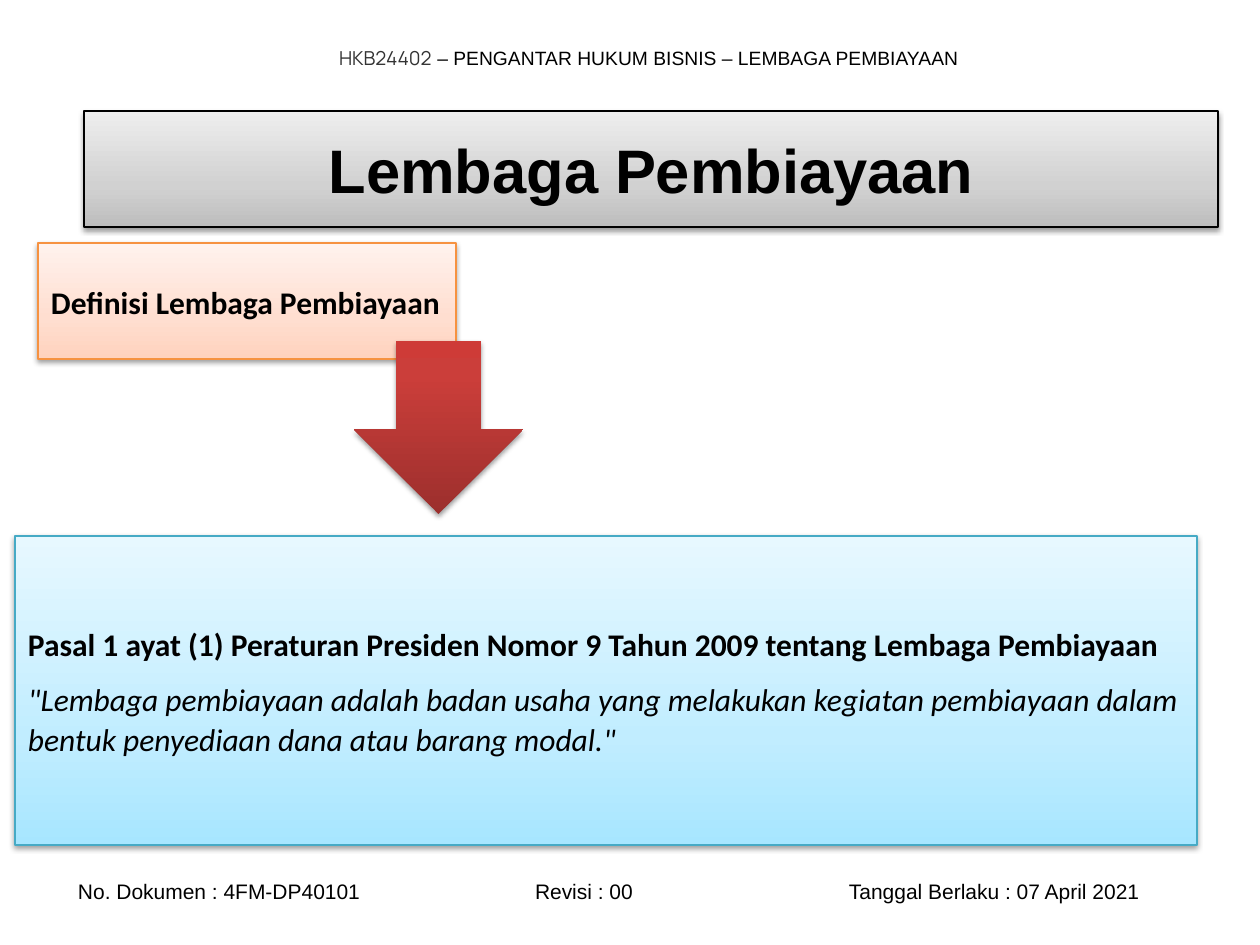
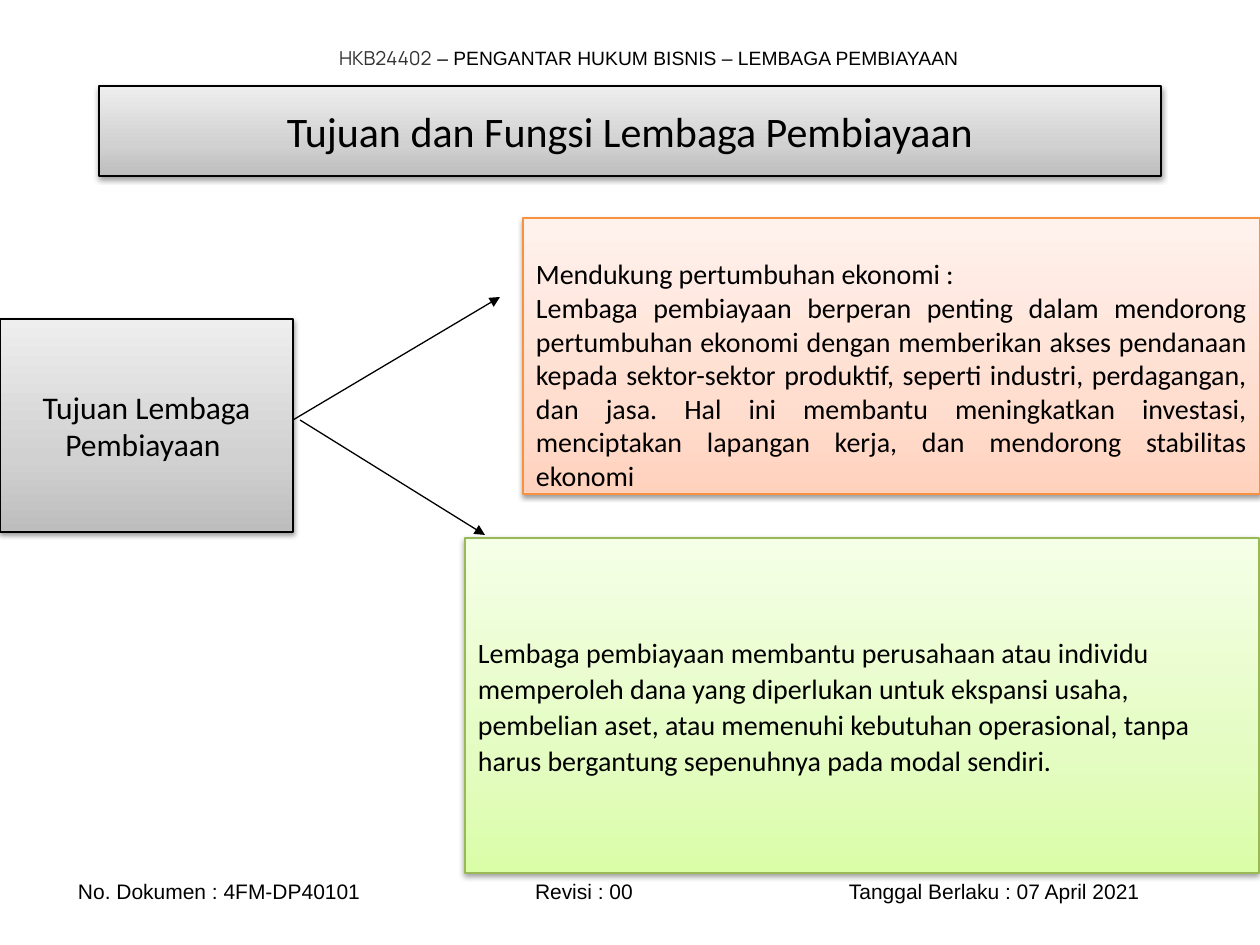
from dataclasses import dataclass, field
from typing import Any

from lxml.etree import SubElement
from pptx import Presentation
from pptx.dml.color import RGBColor
from pptx.enum.shapes import MSO_CONNECTOR, MSO_SHAPE
from pptx.enum.text import MSO_ANCHOR as Anchor, MSO_AUTO_SIZE, PP_ALIGN as Align
from pptx.oxml.ns import qn
from pptx.util import Emu, Pt

PX_PER_INCH = 126
INSET_X, INSET_Y = 13, 6
COLORS = {"text": "000000", "code": "333333"}

# Gradient stops run from the bottom edge to the top edge
GRADIENTS = {
    "gray": ((0, "BDBDBD"), (35, "D1D1D1"), (100, "EEEEEE")),
    "orange": ((0, "FFD2BD"), (35, "FFDED0"), (100, "FFF2ED")),
    "blue": ((0, "A7E6FF"), (35, "C1EDFF"), (100, "E7F8FF")),
    "green": ((0, "DAFDA7"), (35, "E4FCC2"), (100, "F5FFE7")),
    "red": ((0, "9C2F2D"), (80, "CB3E3A"), (100, "CE3B37")),
}
OUTLINES = {"gray": "000000", "orange": "F69240", "blue": "46AAC5", "green": "98B955"}


@dataclass(frozen=True)
class Phrase:
    text: str
    style: dict[str, Any] = field(default_factory=dict)


@dataclass(frozen=True)
class Panel:
    box: tuple[int, int, int, int]
    theme: str
    paragraphs: tuple[tuple[Phrase, ...], ...] = ()
    style: dict[str, Any] = field(default_factory=dict)
    geometry: MSO_SHAPE = MSO_SHAPE.RECTANGLE


@dataclass(frozen=True)
class Arrow:
    start: tuple[int, int]
    end: tuple[int, int]


@dataclass(frozen=True)
class SlideContent:
    title: Panel
    items: tuple[Panel | Arrow, ...]


def px(length: int) -> Emu:
    return Emu(round(length * 914400 / PX_PER_INCH))


def rgb(hex_color: str) -> RGBColor:
    return RGBColor.from_string(hex_color)


def write_text(shape, paragraphs, *, size=18, font="Calibri", color=COLORS["text"],
               bold=False, italic=False, align=Align.LEFT, anchor=Anchor.MIDDLE,
               spacing=1.0, after=0, bottom=INSET_Y, tabs=()) -> None:
    frame = shape.text_frame
    frame.word_wrap = True
    frame.auto_size = MSO_AUTO_SIZE.NONE
    frame.vertical_anchor = anchor
    frame.margin_left = frame.margin_right = px(INSET_X)
    frame.margin_top, frame.margin_bottom = px(INSET_Y), px(bottom)
    for index, phrases in enumerate(paragraphs):
        paragraph = frame.add_paragraph() if index else frame.paragraphs[0]
        paragraph.alignment = align
        paragraph.line_spacing = spacing
        paragraph.space_before, paragraph.space_after = Pt(0), Pt(after)
        if tabs:
            tab_list = SubElement(paragraph._p.get_or_add_pPr(), qn("a:tabLst"))
            for position in tabs:
                SubElement(tab_list, qn("a:tab"), pos=str(px(position)), algn="l")
        for phrase in phrases:
            run = paragraph.add_run()
            run.text = phrase.text
            look = {"size": size, "font": font, "color": color,
                    "bold": bold, "italic": italic} | phrase.style
            run.font.size, run.font.name = Pt(look["size"]), look["font"]
            run.font.bold, run.font.italic = look["bold"], look["italic"]
            run.font.color.rgb = rgb(look["color"])


def decorate(shape, theme: str) -> None:
    """Give a shape its gradient, outline and soft shadow."""
    shape.fill.gradient()
    shape.fill.gradient_angle = 90
    properties = shape._element.spPr
    stops = properties.find(qn("a:gradFill")).find(qn("a:gsLst"))
    stops.clear()
    for percent, color in GRADIENTS[theme]:
        stop = SubElement(stops, qn("a:gs"), pos=str(percent * 1000))
        SubElement(stop, qn("a:srgbClr"), val=color)
    if theme in OUTLINES:
        shape.line.color.rgb = rgb(OUTLINES[theme])
        shape.line.width = Pt(0.75)
    else:
        shape.line.fill.background()
    shape.shadow.inherit = False
    shadow = SubElement(properties.find(qn("a:effectLst")), qn("a:outerShdw"),
                        blurRad=str(Pt(3.1)), dist=str(Pt(1.6)),
                        dir="5400000", rotWithShape="0")
    shade = SubElement(shadow, qn("a:srgbClr"), val="000000")
    SubElement(shade, qn("a:alpha"), val="38000")


def draw_title(slide, panel: Panel) -> None:
    title = slide.shapes.title
    title.left, title.top, title.width, title.height = map(px, panel.box)
    decorate(title, panel.theme)
    write_text(title, panel.paragraphs, **panel.style)


def draw_panel(slide, panel: Panel) -> None:
    shape = slide.shapes.add_shape(panel.geometry, *map(px, panel.box))
    decorate(shape, panel.theme)
    if panel.paragraphs:
        write_text(shape, panel.paragraphs, **panel.style)


def draw_arrow(slide, arrow: Arrow) -> None:
    connector = slide.shapes.add_connector(
        MSO_CONNECTOR.STRAIGHT, *map(px, arrow.start + arrow.end))
    connector.line.color.rgb = rgb(COLORS["text"])
    connector.line.width = Pt(0.75)
    SubElement(connector.line._get_or_add_ln(), qn("a:tailEnd"), type="triangle")
    SubElement(connector._element.spPr, qn("a:effectLst"))


def draw_header_and_footer(slide) -> None:
    header = slide.shapes.add_textbox(*map(px, (123, 39, 1052, 37)))
    write_text(header, ((Phrase("HKB24402", {"font": "Manrope", "color": COLORS["code"]}),
                         Phrase(" – PENGANTAR HUKUM BISNIS – LEMBAGA PEMBIAYAAN")),),
               size=11, font="Arial", align=Align.CENTER)
    footer = slide.shapes.add_textbox(*map(px, (65, 872, 1150, 38)))
    write_text(footer, ((Phrase("No. Dokumen : 4FM-DP40101\tRevisi : 00"
                                "\tTanggal Berlaku : 07 April 2021"),),),
               size=12, font="Arial", tabs=(457, 771))


CENTERED = {"align": Align.CENTER}
LOOSE = {"spacing": 1.07, "after": 8}

SLIDES = (
    # Definition
    SlideContent(
        Panel((84, 111, 1134, 116), "gray", ((Phrase("Lembaga Pembiayaan"),),),
              CENTERED | {"size": 35.1, "font": "Arial", "bold": True}),
        (
            Panel((38, 243, 418, 116), "orange",
                  ((Phrase("Definisi Lembaga Pembiayaan"),),), LOOSE | {"bold": True}),
            Panel((354, 341, 169, 173), "red", geometry=MSO_SHAPE.DOWN_ARROW),
            Panel((15, 536, 1182, 309), "blue", (
                (Phrase("Pasal 1 ayat (1) Peraturan Presiden Nomor 9 Tahun 2009 "
                        "tentang Lembaga Pembiayaan", {"bold": True}),),
                (Phrase('"Lembaga pembiayaan adalah badan usaha yang melakukan kegiatan '
                        'pembiayaan dalam bentuk penyediaan dana atau barang modal."',
                        {"italic": True}),),
            ), LOOSE),
        ),
    ),
    # Purpose and function
    SlideContent(
        Panel((99, 86, 1062, 90), "gray",
              ((Phrase("Tujuan dan Fungsi Lembaga Pembiayaan"),),), CENTERED | {"size": 24}),
        (
            Panel((0, 319, 293, 213), "gray",
                  ((Phrase("Tujuan Lembaga Pembiayaan "),),), CENTERED),
            Arrow((300, 420), (485, 535)),
            Panel((523, 218, 737, 276), "orange", (
                (Phrase("Mendukung pertumbuhan ekonomi : "),),
                (Phrase("Lembaga pembiayaan berperan penting dalam mendorong pertumbuhan "
                        "ekonomi dengan memberikan akses pendanaan kepada sektor-sektor "
                        "produktif, seperti industri, perdagangan, dan jasa. Hal ini "
                        "membantu meningkatkan investasi, menciptakan lapangan kerja, dan "
                        "mendorong stabilitas ekonomi"),),
            ), {"size": 16, "align": Align.JUSTIFY, "anchor": Anchor.BOTTOM, "bottom": 2}),
            Arrow((293, 420), (500, 297)),
            Panel((465, 538, 794, 335), "green", (
                (Phrase("Lembaga pembiayaan membantu perusahaan atau individu memperoleh "
                        "dana yang diperlukan untuk ekspansi usaha, pembelian aset, atau "
                        "memenuhi kebutuhan operasional, tanpa harus bergantung sepenuhnya "
                        "pada modal sendiri."),),
            ), LOOSE | {"size": 16}),
        ),
    ),
)


def main() -> None:
    deck = Presentation()
    deck.slide_width, deck.slide_height = px(1260), px(945)
    title_only = deck.slide_layouts[5]
    for content in SLIDES:
        slide = deck.slides.add_slide(title_only)
        draw_header_and_footer(slide)
        draw_title(slide, content.title)
        for item in content.items:
            if isinstance(item, Arrow):
                draw_arrow(slide, item)
            else:
                draw_panel(slide, item)
    deck.save("out.pptx")


if __name__ == "__main__":
    main()
